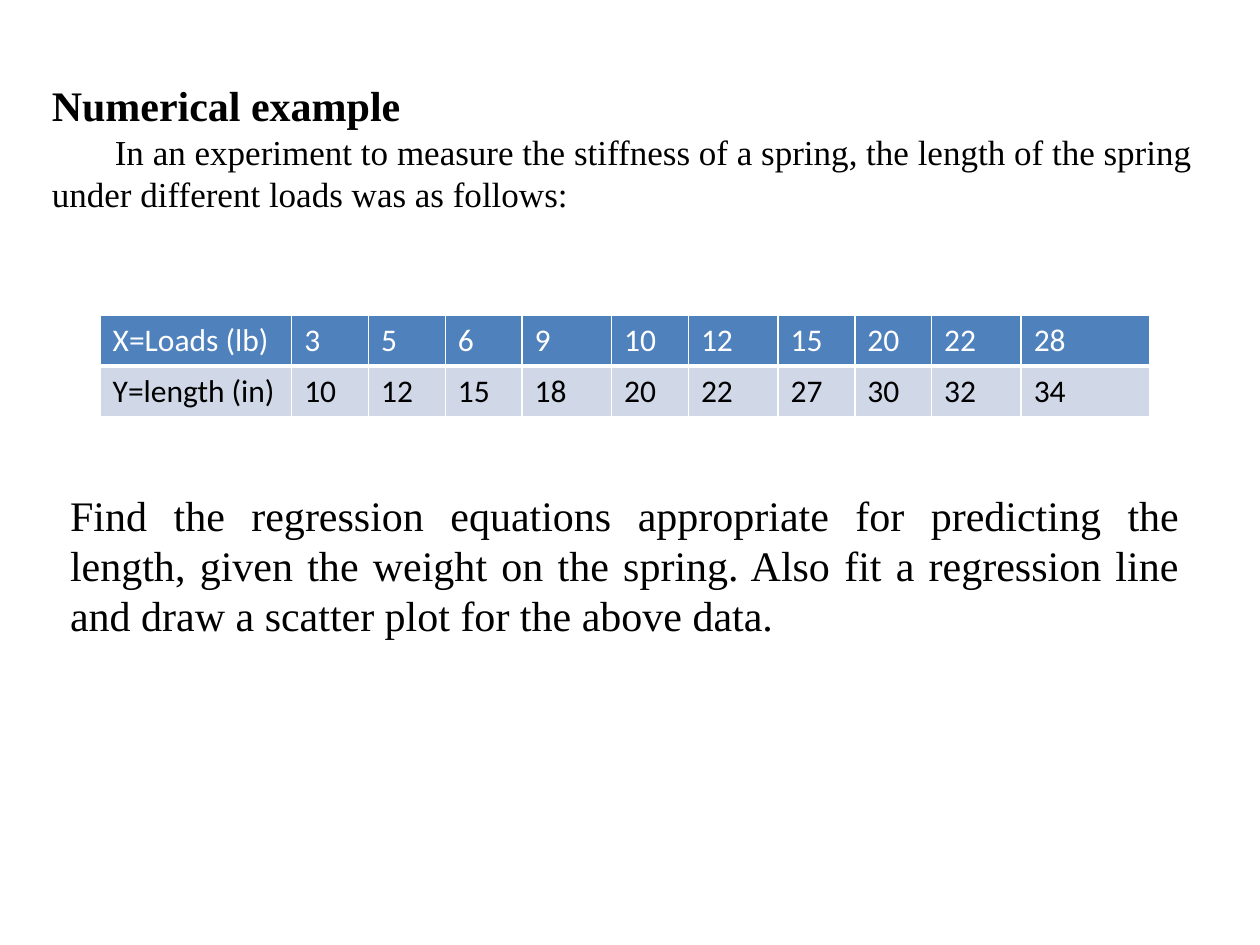
from lxml import etree
from pptx import Presentation
from pptx.dml.color import RGBColor
from pptx.enum import text
from pptx.oxml import ns
from pptx.util import Pt

BLACK = RGBColor(0x00, 0x00, 0x00)
WHITE = RGBColor(0xFF, 0xFF, 0xFF)
BLUE = RGBColor(0x4F, 0x81, 0xBD)
PALE = RGBColor(0xD0, 0xD8, 0xE8)


class Page:
    serif = "Times New Roman"
    sans = "Calibri"

    def __init__(self, deck):
        self.slide = deck.slides.add_slide(deck.slide_layouts[6])

    def run(self, para, words, size, face, color=BLACK, bold=False):
        run = para.add_run()
        run.text = words
        font = run.font
        font.name, font.size, font.bold = face, Pt(size), bold
        font.color.rgb = color

    def block(self, left, top, width, height, paras):
        """Add justified paragraphs, each given as (words, size, bold)."""
        box = self.slide.shapes.add_textbox(
            Pt(left), Pt(top), Pt(width), Pt(height))
        frame = box.text_frame
        frame.word_wrap = True
        for i, (words, size, bold) in enumerate(paras):
            para = frame.add_paragraph() if i else frame.paragraphs[0]
            para.alignment = text.PP_ALIGN.JUSTIFY
            self.run(para, words, size, self.serif, bold=bold)

    def edge(self, cell, side, width):
        props = cell._tc.get_or_add_tcPr()
        line = etree.SubElement(props, ns.qn(f"a:ln{side}"), w=str(Pt(width)))
        fill = etree.SubElement(line, ns.qn("a:solidFill"))
        etree.SubElement(fill, ns.qn("a:srgbClr"), val=str(WHITE))

    def table(self, left, top, widths, height, rows, looks):
        """Add rows of cells; looks holds (fill, ink, bottom edge) per row."""
        grid = self.slide.shapes.add_table(
            len(rows), len(widths), Pt(left), Pt(top),
            Pt(sum(widths)), Pt(height * len(rows))).table
        grid.first_row = grid.horz_banding = False
        for col, width in zip(grid.columns, widths):
            col.width = Pt(width)
        for row, items, (fill, ink, base) in zip(grid.rows, rows, looks):
            row.height = Pt(height)
            for cell, item in zip(row.cells, items):
                for side, width in zip("LRTB", (1, 1, 1, base)):
                    self.edge(cell, side, width)
                cell.fill.solid()
                cell.fill.fore_color.rgb = fill
                para = cell.text_frame.paragraphs[0]
                self.run(para, str(item), 18, self.sans, ink)


def main():
    deck = Presentation()
    deck.slide_width, deck.slide_height = Pt(720), Pt(540)
    page = Page(deck)

    # Heading and problem
    page.block(22.5, 42, 666, 109, [
        ("Numerical example", 24, True),
        ("\tIn an experiment to measure the stiffness of a spring, the length "
         "of the spring under different loads was as follows:", 20, False)])

    # Loads and lengths
    loads = [3, 5, 6, 9, 10, 12, 15, 20, 22, 28]
    lengths = [10, 12, 15, 18, 20, 22, 27, 30, 32, 34]
    slim, mid = 43.9, 51.2
    widths = [109.5, slim, slim, slim, mid, slim, mid, slim, slim, mid, 73.2]
    page.table(57.2, 180, widths, 29.2,
               [["X=Loads (lb)", *loads], ["Y=length (in)", *lengths]],
               [(BLUE, WHITE, 3), (PALE, BLACK, 1)])

    # Task
    page.block(33, 276, 648, 153, [
        ("Find the regression equations appropriate for predicting the length, "
         "given the weight on the spring. Also fit a regression line and draw "
         "a scatter plot for the above data.", 24, False)])

    deck.save("out.pptx")


if __name__ == "__main__":
    main()
